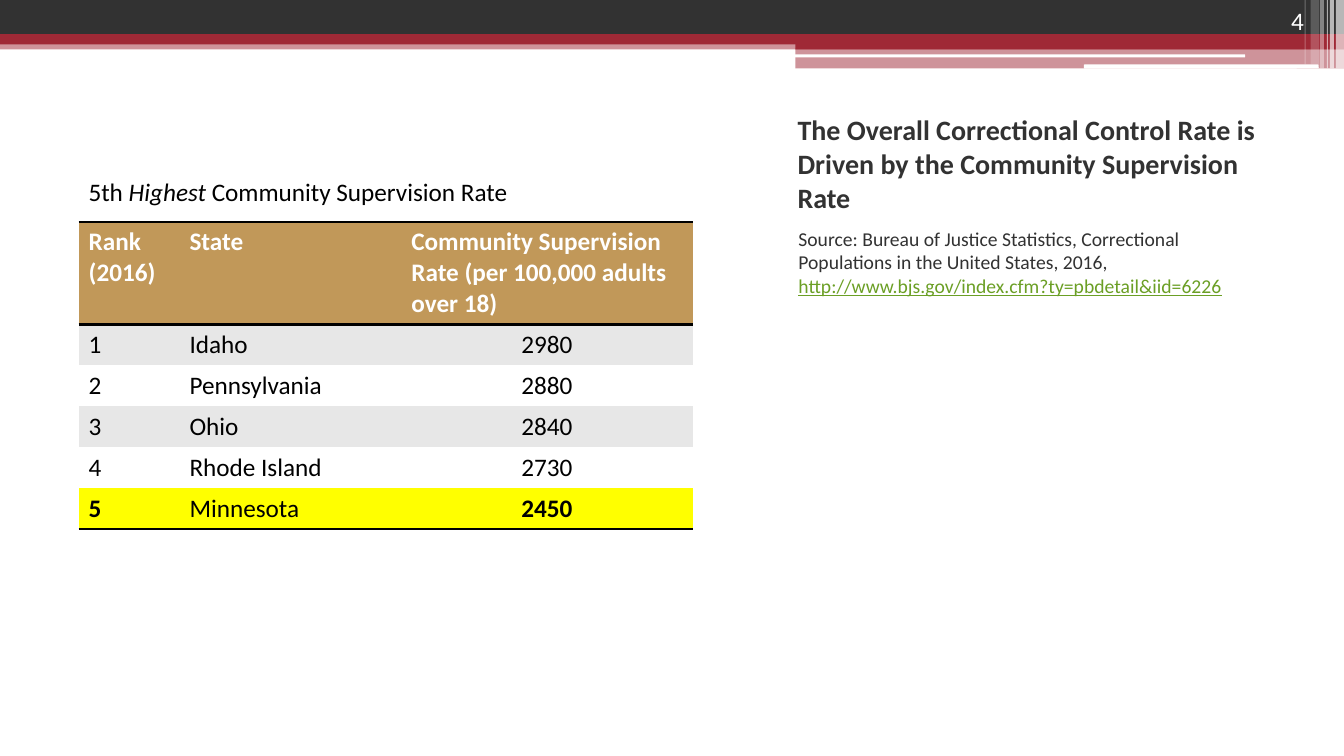
from dataclasses import dataclass

from lxml.etree import SubElement
from pptx import Presentation
from pptx.dml.color import RGBColor
from pptx.enum.shapes import MSO_SHAPE as Preset
from pptx.enum.text import MSO_ANCHOR as Anchor, MSO_AUTO_SIZE as AutoSize, PP_ALIGN as Align
from pptx.oxml.ns import qn
from pptx.util import Emu, Pt

PX = 9144
NO_STYLE = "{2D5ABB26-0587-4C30-8999-92F81FD0307C}"


@dataclass(frozen=True)
class Theme:
    font: str = "Calibri"
    dark: str = "323232"
    red: str = "9F2936"
    white: str = "FFFFFF"
    black: str = "000000"
    tan: str = "C19859"
    grey: str = "E7E7E7"
    yellow: str = "FFFF00"
    link: str = "6B9F25"
    title_size: int = 20
    text_size: int = 18
    source_size: int = 14
    rule_width: int = 2


@dataclass(frozen=True)
class Box:
    left: int
    top: int
    width: int
    height: int

    def emu(self) -> list[Emu]:
        return [Emu(side * PX) for side in (self.left, self.top, self.width, self.height)]


@dataclass(frozen=True)
class Band:
    box: Box
    color: str
    opacity: int = 100
    preset: Preset = Preset.RECTANGLE


@dataclass(frozen=True)
class StateRate:
    rank: str
    state: str
    rate: str
    highlighted: bool = False


THEME = Theme()

BANDS = [
    Band(Box(0, 40, 1333, 9), THEME.red, 50),
    Band(Box(0, 0, 1333, 34), THEME.dark),
    Band(Box(0, 34, 1333, 10), THEME.red),
    Band(Box(789, 39, 544, 10), THEME.red),
    Band(Box(789, 48, 544, 20), THEME.red, 50),
    Band(Box(788, 54, 447, 3), THEME.white, preset=Preset.ROUNDED_RECTANGLE),
    Band(Box(1075, 64, 233, 4), THEME.white, preset=Preset.ROUNDED_RECTANGLE),
    Band(Box(1325, 0, 8, 68), THEME.white, 65),
    Band(Box(1319, 0, 4, 68), THEME.white, 65),
    Band(Box(1316, 0, 1, 68), THEME.white, 60),
    Band(Box(1309, 0, 4, 68), THEME.white, 40),
    Band(Box(1300, 0, 8, 64), THEME.white, 20),
    Band(Box(1294, 0, 1, 64), THEME.white, 30),
]

HEADINGS = ["Rank (2016)", "State", "Community Supervision Rate (per 100,000 adults over 18)"]
RATES = [
    StateRate("1", "Idaho", "2980"),
    StateRate("2", "Pennsylvania", "2880"),
    StateRate("3", "Ohio", "2840"),
    StateRate("4", "Rhode Island", "2730"),
    StateRate("5", "Minnesota", "2450", highlighted=True),
]
COLUMN_WIDTHS = [100, 220, 289]
HEADER_HEIGHT = 102
ROW_HEIGHT = 40


def add_text(paragraph, text: str, *, size: int = THEME.text_size, color: str = THEME.black,
             bold: bool = False, italic: bool = False, underline: bool = False,
             align: Align = Align.LEFT) -> None:
    paragraph.alignment = align
    run = paragraph.add_run()
    run.text = text
    font = run.font
    font.name, font.size = THEME.font, Pt(size)
    font.bold, font.italic, font.underline = bold, italic, underline
    font.color.rgb = RGBColor.from_string(color)


def prepare_frame(shape, anchor: Anchor):
    frame = shape.text_frame
    frame.word_wrap = True
    frame.auto_size = AutoSize.NONE
    frame.vertical_anchor = anchor
    return frame.paragraphs[0]


def add_text_box(slide, box: Box, anchor: Anchor = Anchor.TOP):
    return prepare_frame(slide.shapes.add_textbox(*box.emu()), anchor)


def add_band(slide, band: Band) -> None:
    shape = slide.shapes.add_shape(band.preset, *band.box.emu())
    shape.shadow.inherit = False
    shape.line.fill.background()
    shape.fill.solid()
    shape.fill.fore_color.rgb = RGBColor.from_string(band.color)
    if band.opacity < 100:
        color = shape._element.spPr.find(qn("a:solidFill")).find(qn("a:srgbClr"))
        SubElement(color, qn("a:alpha"), val=str(band.opacity * 1000))


def add_border(cell, side: str) -> None:
    line = SubElement(cell._tc.get_or_add_tcPr(), qn(f"a:{side}"), w=str(Pt(THEME.rule_width)))
    SubElement(SubElement(line, qn("a:solidFill")), qn("a:srgbClr"), val=THEME.black)


def fill_cell(cell, text: str, fill: str, borders: tuple[str, ...], **text_format) -> None:
    for side in borders:
        add_border(cell, side)
    cell.fill.solid()
    cell.fill.fore_color.rgb = RGBColor.from_string(fill)
    add_text(cell.text_frame.paragraphs[0], text, **text_format)


def add_rate_table(slide) -> None:
    height = HEADER_HEIGHT + ROW_HEIGHT * len(RATES)
    box = Box(78, 220, sum(COLUMN_WIDTHS), height)
    table = slide.shapes.add_table(len(RATES) + 1, len(HEADINGS), *box.emu()).table
    table.horz_banding = False
    table._tbl.tblPr.find(qn("a:tableStyleId")).text = NO_STYLE
    for column, width in zip(table.columns, COLUMN_WIDTHS):
        column.width = Emu(width * PX)
    for index, row in enumerate(table.rows):
        row.height = Emu((ROW_HEIGHT if index else HEADER_HEIGHT) * PX)

    for column, heading in enumerate(HEADINGS):
        fill_cell(table.cell(0, column), heading, THEME.tan, ("lnT", "lnB"),
                  color=THEME.white, bold=True)
    for index, entry in enumerate(RATES, start=1):
        fill = THEME.yellow if entry.highlighted else THEME.grey if index % 2 else THEME.white
        borders = ("lnB",) if index == len(RATES) else ()
        marked = entry.highlighted
        fill_cell(table.cell(index, 0), entry.rank, fill, borders, bold=marked)
        fill_cell(table.cell(index, 1), entry.state, fill, borders)
        fill_cell(table.cell(index, 2), entry.rate, fill, borders, bold=marked,
                  align=Align.CENTER)


def add_title(slide) -> None:
    title = slide.shapes.title
    title.left, title.top, title.width, title.height = Box(781, 121, 493, 96).emu()
    add_text(prepare_frame(title, Anchor.BOTTOM),
             "The Overall Correctional Control Rate is Driven by the Community Supervision Rate",
             size=THEME.title_size, color=THEME.dark, bold=True)


def add_source(slide) -> None:
    paragraph = add_text_box(slide, Box(782, 220, 492, 501))
    paragraph.space_before = Pt(3)
    add_text(paragraph, "Source: Bureau of Justice Statistics, Correctional Populations "
             "in the United States, 2016, ", size=THEME.source_size, color=THEME.dark)
    add_text(paragraph, "http://www.bjs.gov/index.cfm?ty=pbdetail&iid=6226",
             size=THEME.source_size, color=THEME.link, underline=True)


def add_caption(slide) -> None:
    paragraph = add_text_box(slide, Box(78, 170, 574, 71))
    add_text(paragraph, "5th ")
    add_text(paragraph, "Highest", italic=True)
    add_text(paragraph, " Community Supervision Rate")


def main() -> None:
    presentation = Presentation()
    presentation.slide_width, presentation.slide_height = Emu(1333 * PX), Emu(750 * PX)
    slide = presentation.slides.add_slide(presentation.slide_layouts.get_by_name("Title Only"))
    for band in BANDS:
        add_band(slide, band)
    add_title(slide)
    add_rate_table(slide)
    add_source(slide)
    add_text(add_text_box(slide, Box(1192, 0, 111, 40), Anchor.BOTTOM), "4",
             color=THEME.white, align=Align.RIGHT)
    add_caption(slide)
    presentation.save("out.pptx")


if __name__ == "__main__":
    main()
